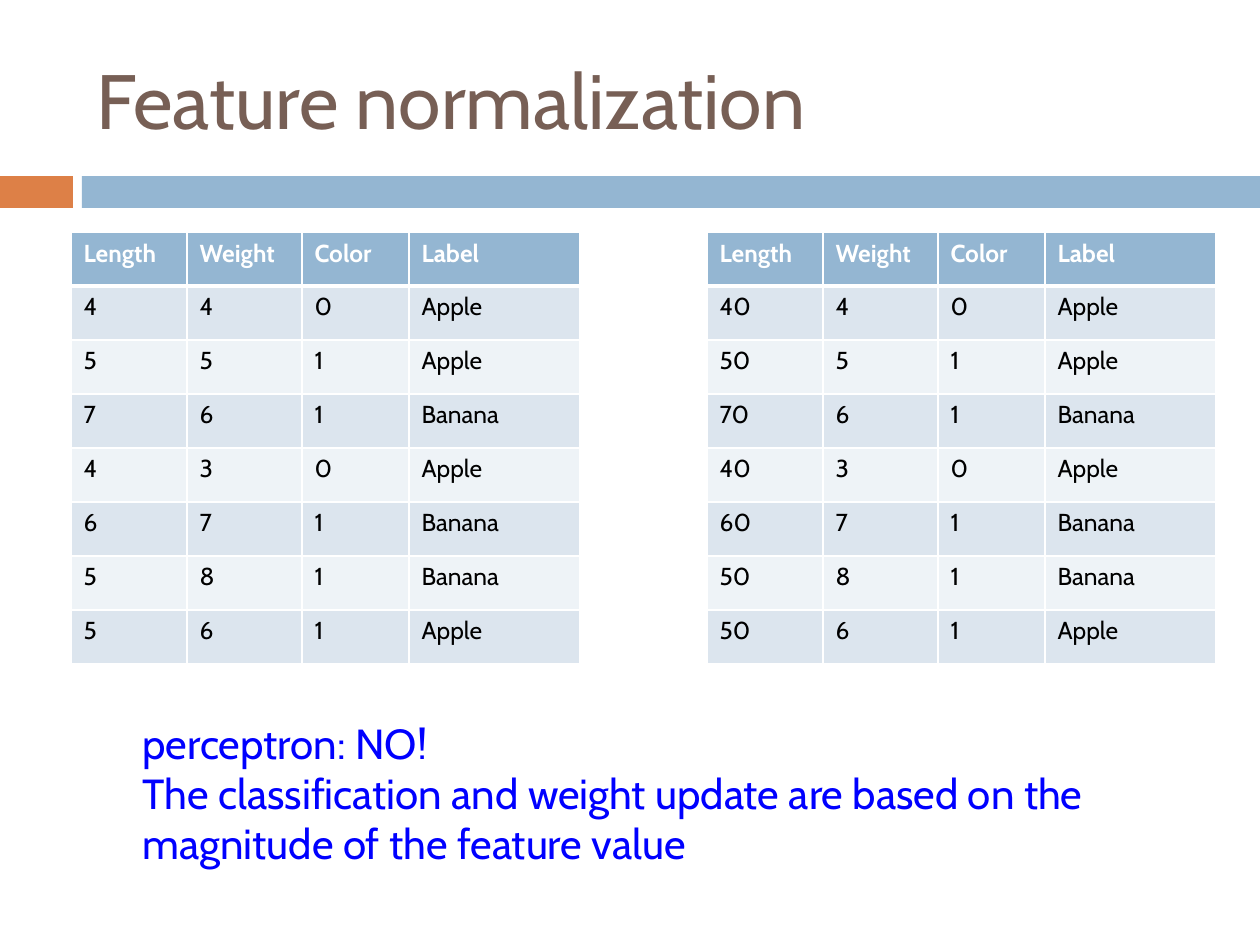
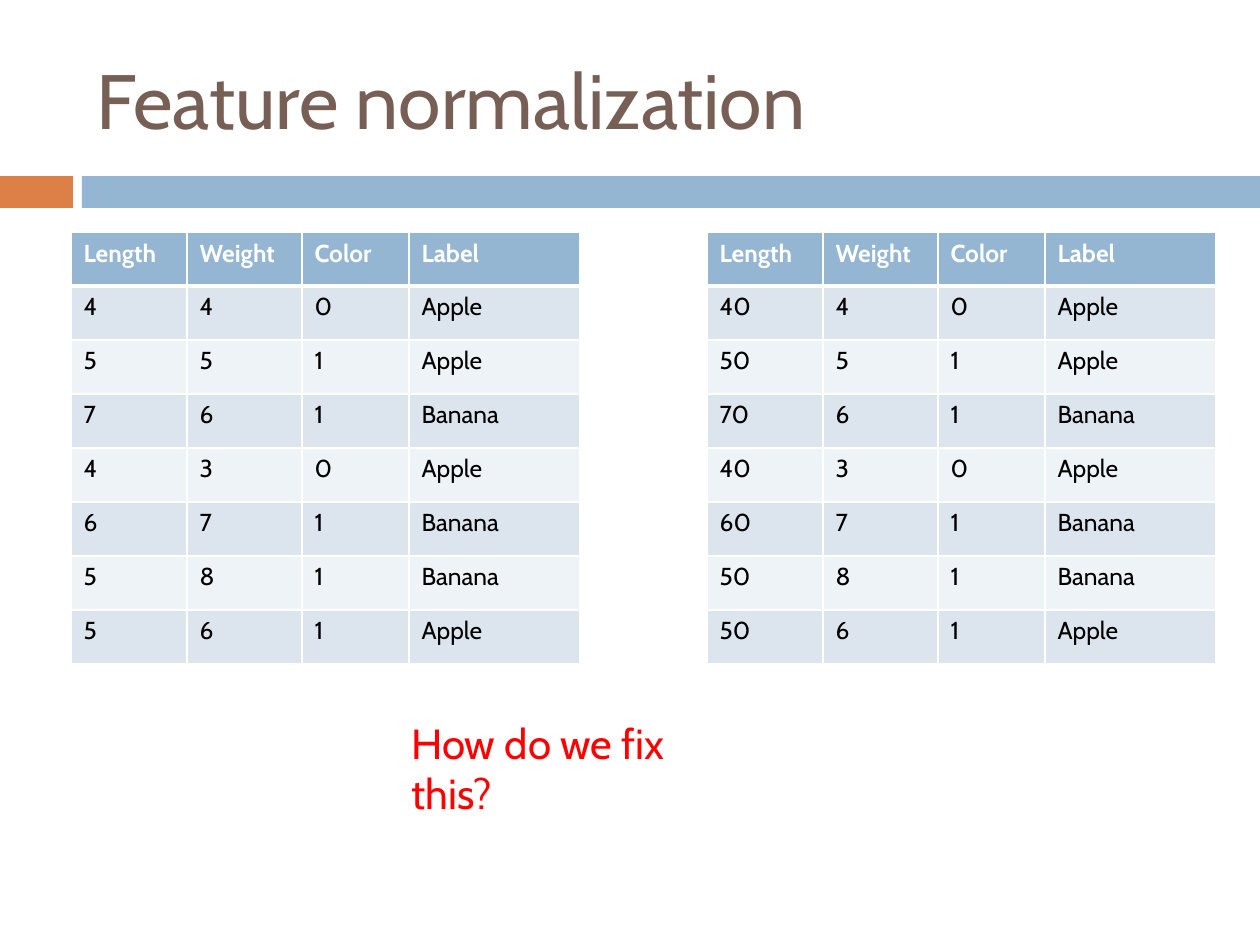
import pptx
import pptx.dml.color
import pptx.enum.shapes
import pptx.enum.text
import pptx.oxml
import pptx.oxml.ns
import pptx.util

PX = 914400 / 126
FONT = "Cabin"
HUES = {
    "title": "775F55", "accent": "DD8047", "band": "94B6D2",
    "odd": "DCE5EE", "even": "EEF3F7", "white": "FFFFFF",
    "black": "000000", "answer": "0000FF", "ask": "FF0000",
}
BANDS = [(0, 73, "accent"), (82, 1178, "band")]
HEADS = ["Length", "Weight", "Color", "Label"]
FRUITS = [
    (4, 4, 0, "Apple"), (5, 5, 1, "Apple"), (7, 6, 1, "Banana"),
    (4, 3, 0, "Apple"), (6, 7, 1, "Banana"), (5, 8, 1, "Banana"),
    (5, 6, 1, "Apple"),
]
WIDTHS = [116, 115, 107, 171]
ROW = 54
TABLES = [(71, 1), (707, 10)]  # left edge, factor on the length
NOTES = [
    ("perceptron: NO!\nThe classification and weight update are based on "
     "the magnitude of the feature value", 130, 1033, 165, "answer"),
    ("How do we fix this?", 399, 363, 63, "ask"),
]


def color(name):
    return pptx.dml.color.RGBColor.from_string(HUES[name])


def style(frame, size, hue, bold=False):
    """Set one font on all paragraphs of a text frame, aligned left."""
    for para in frame.paragraphs:
        para.alignment = pptx.enum.text.PP_ALIGN.LEFT
        para.font.name = FONT
        para.font.size = pptx.util.Pt(size)
        para.font.bold = bold
        para.font.color.rgb = color(hue)


deck = pptx.Presentation()
deck.slide_width = pptx.util.Emu(round(1260 * PX))
deck.slide_height = pptx.util.Emu(round(945 * PX))

for note, left, width, height, hue in NOTES:
    slide = deck.slides.add_slide(deck.slide_layouts[5])

    title = slide.shapes.title
    title.left, title.top, title.width, title.height = [
        round(n * PX) for n in (84, 31, 1124, 136)]
    title.text_frame.text = "Feature normalization"
    title.text_frame.vertical_anchor = pptx.enum.text.MSO_ANCHOR.MIDDLE
    title.text_frame.auto_size = pptx.enum.text.MSO_AUTO_SIZE.NONE
    style(title.text_frame, 44, "title")

    for start, span, fill in BANDS:
        band = slide.shapes.add_shape(
            pptx.enum.shapes.MSO_SHAPE.RECTANGLE,
            *[round(n * PX) for n in (start, 176, span, 32)])
        band.shadow.inherit = False
        band.fill.solid()
        band.fill.fore_color.rgb = color(fill)
        band.line.fill.background()

    for start, factor in TABLES:
        rows = [HEADS] + [(size * factor, *rest) for size, *rest in FRUITS]
        table = slide.shapes.add_table(
            len(rows), len(HEADS),
            *[round(n * PX) for n in
              (start, 232, sum(WIDTHS), ROW * len(rows))]).table
        for col, span in zip(table.columns, WIDTHS):
            col.width = round(span * PX)
        for r, row in enumerate(rows):
            table.rows[r].height = round(ROW * PX)
            fill = "band" if r == 0 else "odd" if r % 2 else "even"
            edges = {"L": 1, "R": 1, "T": 3 if r == 1 else 1,
                     "B": 3 if r == 0 else 1}
            for c, value in enumerate(row):
                cell = table.cell(r, c)
                cell.text = str(value)
                style(cell.text_frame, 14, "black" if r else "white", r == 0)
                cell.fill.solid()
                cell.fill.fore_color.rgb = color(fill)
                props = cell._tc.get_or_add_tcPr()
                for i, (side, points) in enumerate(edges.items()):
                    props.insert(i, pptx.oxml.parse_xml(
                        f'<a:ln{side} {pptx.oxml.ns.nsdecls("a")} '
                        f'w="{pptx.util.Pt(points)}"><a:solidFill>'
                        f'<a:srgbClr val="{HUES["white"]}"/>'
                        f'</a:solidFill></a:ln{side}>'))

    box = slide.shapes.add_textbox(
        *[round(n * PX) for n in (left, 711, width, height)])
    box.text_frame.word_wrap = True
    box.text_frame.text = note
    style(box.text_frame, 24, hue)

deck.save("out.pptx")
